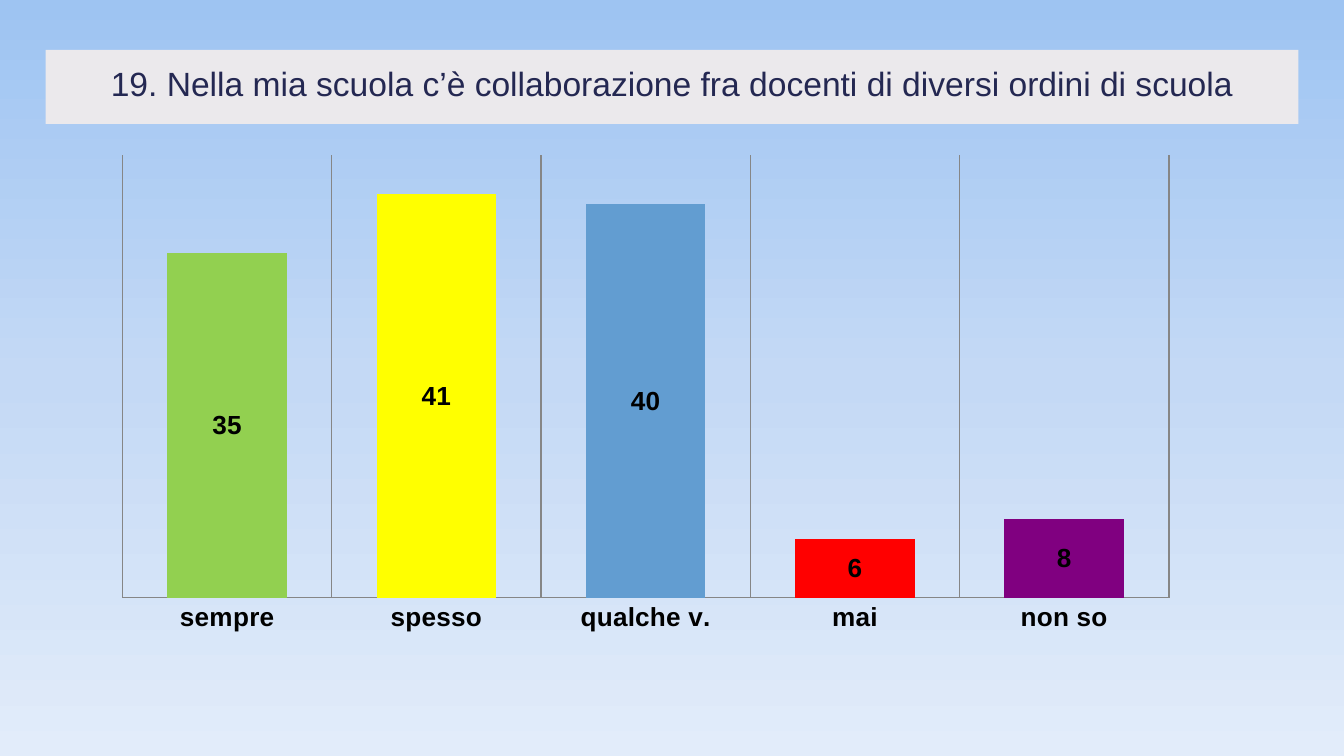
from copy import deepcopy
from dataclasses import dataclass

from lxml import etree
from pptx import Presentation
from pptx.chart.data import CategoryChartData
from pptx.dml.color import RGBColor
from pptx.enum.chart import XL_CHART_TYPE, XL_LABEL_POSITION, XL_TICK_MARK
from pptx.enum.text import MSO_ANCHOR, PP_ALIGN
from pptx.oxml.ns import qn
from pptx.util import Inches, Pt

STACKED = XL_CHART_TYPE.COLUMN_STACKED
LABEL_CENTER = XL_LABEL_POSITION.CENTER
NO_TICK = XL_TICK_MARK.NONE
TOP = MSO_ANCHOR.TOP
CENTER = PP_ALIGN.CENTER
TITLE_ONLY = 5


@dataclass(frozen=True)
class Theme:
    font: str = "Arial"
    title_size: int = 18
    label_size: int = 14
    base_size: int = 10
    title_text: str = "242852"
    title_fill: str = "EBE9EC"
    text: str = "000000"
    grid: str = "868686"
    sky: tuple = ("9EC4F2", "C4D9F5", "E2ECFA")


THEME = Theme()
SLIDE_W = Inches(10)
SLIDE_H = SLIDE_W * 9 // 16

# Boxes as shares of the slide: left, top, width, height
TITLE_BOX = (0.034, 0.066, 0.932, 0.098)
CHART_BOX = (0.075, 0.192, 0.811, 0.658)
# Plot area as shares of the chart
PLOT_BOX = {"x": 0.02, "y": 0.02, "w": 0.96, "h": 0.89}

TITLE = "19. Nella mia scuola c’è collaborazione fra docenti di diversi ordini di scuola"
# Answer, count, bar colour
ANSWERS = [
    ("sempre", 35, "92D050"),
    ("spesso", 41, "FFFF00"),
    ("qualche v.", 40, "629DD1"),
    ("mai", 6, "FF0000"),
    ("non so", 8, "800080"),
]


def rgb(value):
    return RGBColor.from_string(value)


def place(box):
    x, y, w, h = box
    return [round(v) for v in (x * SLIDE_W, y * SLIDE_H, w * SLIDE_W, h * SLIDE_H)]


def style_font(font, size, color, bold=False):
    font.name = THEME.font
    font.size = Pt(size)
    font.bold = bold
    font.color.rgb = rgb(color)


def paint_background(s):
    fill = s.background.fill
    fill.gradient()
    fill.gradient_angle = 270  # counter-clockwise, so top to bottom
    stops = s.element.find(".//" + qn("a:gsLst"))
    stops.append(deepcopy(stops[-1]))
    for i, (stop, color) in enumerate(zip(fill.gradient_stops, THEME.sky)):
        stop.color.rgb = rgb(color)
        stop.position = i / (len(THEME.sky) - 1)


def add_title(s, box):
    sp = s.shapes.title
    sp.left, sp.top, sp.width, sp.height = place(box)
    sp.fill.solid()
    sp.fill.fore_color.rgb = rgb(THEME.title_fill)
    tf = sp.text_frame
    tf.text = TITLE
    tf.word_wrap = True
    tf.vertical_anchor = TOP
    tf.margin_left = tf.margin_right = tf.margin_top = tf.margin_bottom = Inches(0.1)
    p = tf.paragraphs[0]
    p.alignment = CENTER
    style_font(p.runs[0].font, THEME.title_size, THEME.title_text)


def set_plot_layout(chart):
    plot_area = chart.element.find(".//" + qn("c:plotArea"))
    layout = plot_area.find(qn("c:layout"))
    if layout is None:
        layout = etree.Element(qn("c:layout"))
        plot_area.insert(0, layout)
    manual = etree.SubElement(layout, qn("c:manualLayout"))
    settings = {"layoutTarget": "inner", "xMode": "edge", "yMode": "edge", **PLOT_BOX}
    for tag, value in settings.items():
        etree.SubElement(manual, qn("c:" + tag)).set("val", str(value))


def add_answer_chart(s, box):
    names, counts, colors = zip(*ANSWERS)
    data = CategoryChartData()
    data.categories = names
    data.add_series("Series 1", counts)
    chart = s.shapes.add_chart(STACKED, *place(box), data).chart
    chart.has_legend = False
    chart.has_title = False
    style_font(chart.font, THEME.base_size, THEME.text)
    set_plot_layout(chart)

    # Axes
    cat = chart.category_axis
    cat.major_tick_mark = cat.minor_tick_mark = NO_TICK
    cat.has_major_gridlines = True
    style_font(cat.tick_labels.font, THEME.label_size, THEME.text, bold=True)
    for line in (cat.format.line, cat.major_gridlines.format.line):
        line.color.rgb = rgb(THEME.grid)
        line.width = Pt(0.7)
    val = chart.value_axis
    val.minimum_scale, val.maximum_scale = 0, 45
    val.has_major_gridlines = False
    val.visible = False

    # Bars and their values
    plot = chart.plots[0]
    plot.vary_by_categories = False
    plot.gap_width, plot.overlap = 75, 100
    series = plot.series[0]
    labels = series.data_labels
    labels.show_value = True
    labels.position = LABEL_CENTER
    style_font(labels.font, THEME.label_size, THEME.text, bold=True)
    for i, color in enumerate(colors):
        fill = series.points[i].format.fill
        fill.solid()
        fill.fore_color.rgb = rgb(color)


def main():
    prs = Presentation()
    prs.slide_width, prs.slide_height = SLIDE_W, SLIDE_H
    s = prs.slides.add_slide(prs.slide_layouts[TITLE_ONLY])
    paint_background(s)
    add_title(s, TITLE_BOX)
    add_answer_chart(s, CHART_BOX)
    prs.save("out.pptx")


if __name__ == "__main__":
    main()
